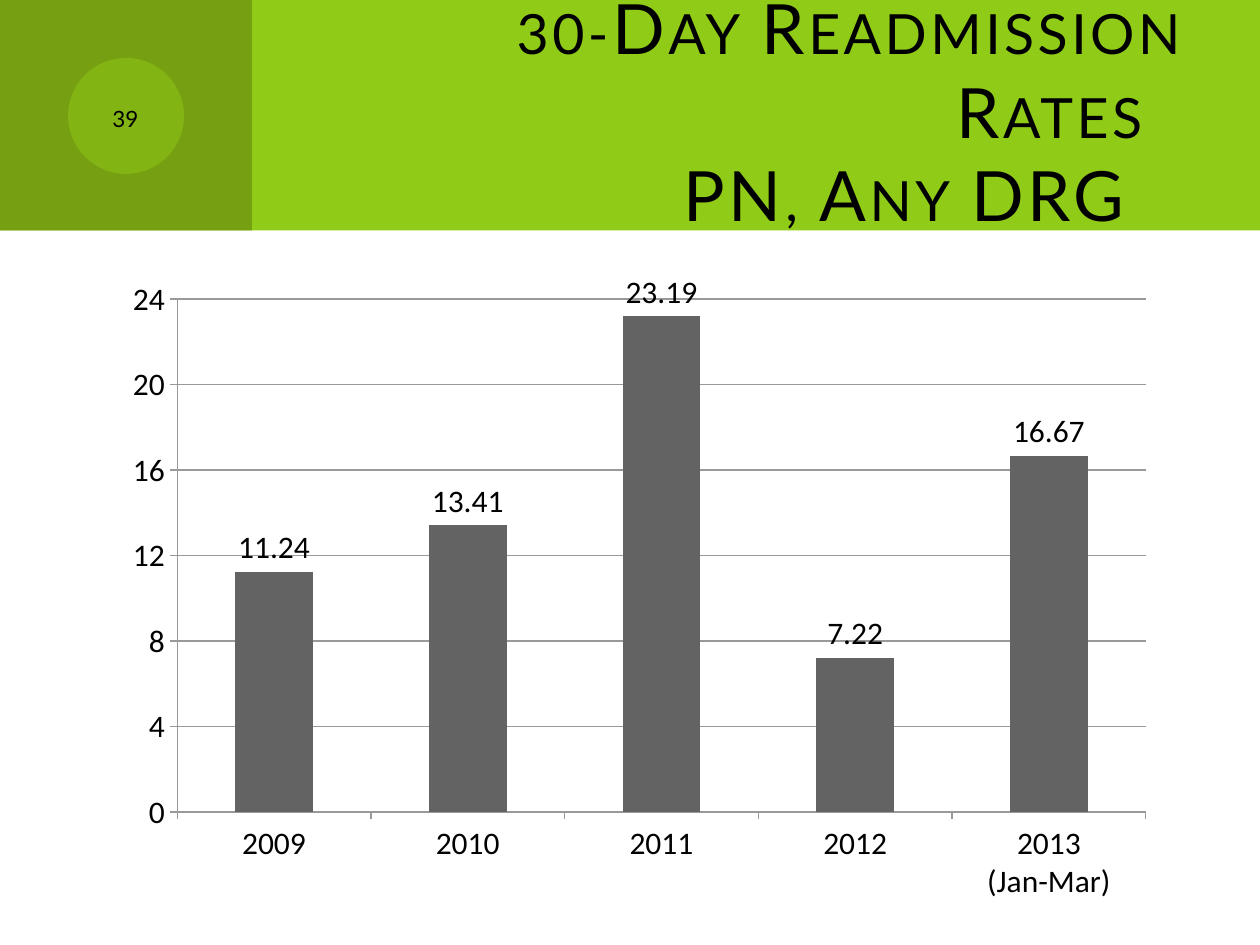
from lxml import etree
from pptx import Presentation
from pptx.chart.data import CategoryChartData
from pptx.dml.color import RGBColor
from pptx.enum.chart import XL_CHART_TYPE, XL_LABEL_POSITION, XL_TICK_MARK
from pptx.enum.shapes import MSO_SHAPE
from pptx.enum.text import MSO_ANCHOR, PP_ALIGN
from pptx.oxml.ns import qn
from pptx.util import Inches, Pt

RECT, OVAL = MSO_SHAPE.RECTANGLE, MSO_SHAPE.OVAL
COLUMN = XL_CHART_TYPE.COLUMN_CLUSTERED
ABOVE = XL_LABEL_POSITION.OUTSIDE_END
TICK = XL_TICK_MARK.OUTSIDE
MIDDLE = MSO_ANCHOR.MIDDLE
RIGHT, CENTER = PP_ALIGN.RIGHT, PP_ALIGN.CENTER
GREEN, DARK, GRAY, LINE, BLACK = "8FCB17", "769F11", "636363", "999999", "000000"
RATES = {"2009": 11.24, "2010": 13.41, "2011": 23.19, "2012": 7.22,
         "2013\n(Jan-Mar)": 16.67}
PLOT = {"x": 0.078, "y": 0.035, "w": 0.913, "h": 0.791}


def color(code):
    return RGBColor.from_string(code)


def apply(item, form):
    for name, value in form.items():
        setattr(item, name, value)


def add_block(slide, kind, box, fill, alpha=None):
    shape = slide.shapes.add_shape(kind, *map(Inches, box))
    shape.shadow.inherit = False
    shape.fill.solid()
    shape.fill.fore_color.rgb = color(fill)
    shape.line.fill.background()
    if alpha:
        tone = shape.fill._xPr.find(".//" + qn("a:srgbClr"))
        etree.SubElement(tone, qn("a:alpha")).set("val", str(alpha * 1000))


def add_text(slide, box, text, size, align, space=0):
    frame = slide.shapes.add_textbox(*map(Inches, box)).text_frame
    apply(frame, {"word_wrap": True, "vertical_anchor": MIDDLE})
    para = frame.paragraphs[0]
    apply(para, {"text": text, "alignment": align})
    for run in para.runs:
        apply(run.font, {"size": Pt(size), "name": "Lato"})
        run.font.color.rgb = color(BLACK)
        props = run._r.get_or_add_rPr()
        props.set("cap", "small")
        props.set("spc", str(space * 100))


def set_plot(chart):
    area = chart._chartSpace.chart.plotArea
    for old in area.findall(qn("c:layout")):
        area.remove(old)
    layout = etree.Element(qn("c:layout"))
    area.insert(0, layout)
    manual = etree.SubElement(layout, qn("c:manualLayout"))
    parts = {"layoutTarget": "inner", "xMode": "edge", "yMode": "edge", **PLOT}
    for name, value in parts.items():
        etree.SubElement(manual, qn("c:" + name)).set("val", str(value))


def add_rates(slide, box):
    data = CategoryChartData()
    data.categories = list(RATES)
    data.add_series("Series 1", list(RATES.values()))
    chart = slide.shapes.add_chart(COLUMN, *map(Inches, box), data).chart
    apply(chart, {"has_legend": False, "has_title": False})
    apply(chart.font, {"size": Pt(18), "name": "Calibri"})
    chart.font.color.rgb = color(BLACK)
    scale = chart.value_axis
    apply(scale, {"minimum_scale": 0, "maximum_scale": 24, "major_unit": 4,
                  "has_major_gridlines": True})
    for axis in (scale, chart.category_axis):
        axis.major_tick_mark = TICK
        axis.format.line.color.rgb = color(LINE)
    scale.major_gridlines.format.line.color.rgb = color(LINE)
    plot = chart.plots[0]
    apply(plot, {"gap_width": 150, "vary_by_categories": False,
                 "has_data_labels": True})
    apply(plot.data_labels, {"show_value": True, "position": ABOVE})
    bars = plot.series[0].format.fill
    bars.solid()
    bars.fore_color.rgb = color(GRAY)
    set_plot(chart)


def main():
    deck = Presentation()
    apply(deck, {"slide_width": Inches(10), "slide_height": Inches(7.5)})
    slide = deck.slides.add_slide(deck.slide_layouts[6])
    add_block(slide, RECT, (0, 0, 10, 1.83), GREEN)
    add_block(slide, RECT, (0, 0, 2, 1.83), DARK)
    add_block(slide, OVAL, (0.54, 0.46, 0.92, 0.92), GREEN, 50)
    add_text(slide, (2.67, 0.25, 6.83, 1.25),
             "30-Day Readmission Rates \vPN, Any DRG ", 39.6, RIGHT, 2)
    add_rates(slide, (0.75, 2.17, 8.42, 5.17))
    add_text(slide, (0.58, 0.67, 0.83, 0.5), "39", 16, CENTER)
    deck.save("out.pptx")


if __name__ == "__main__":
    main()
